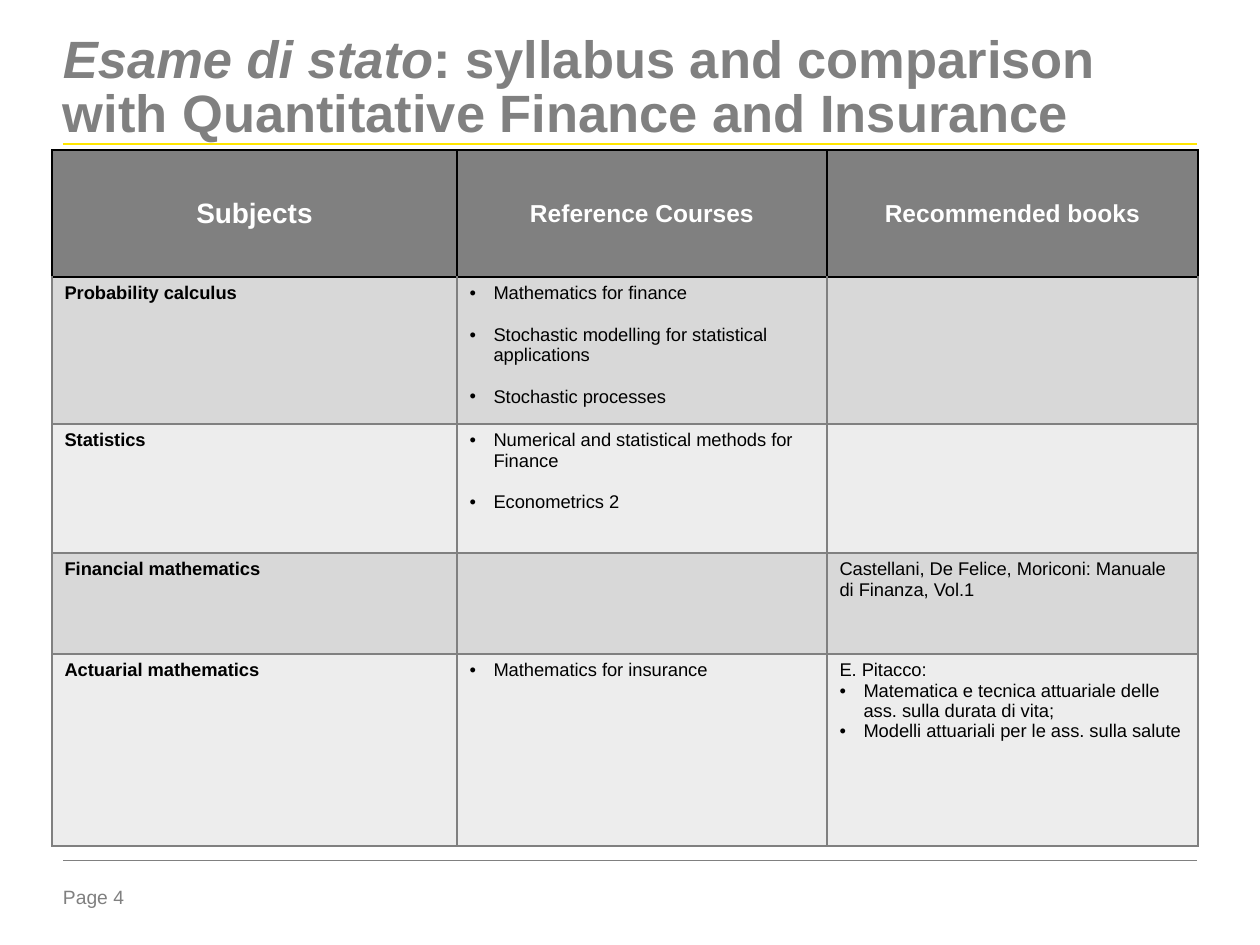
from lxml import etree
from pptx import Presentation
from pptx.dml.color import RGBColor
from pptx.enum.shapes import MSO_CONNECTOR
from pptx.enum.text import MSO_ANCHOR, PP_ALIGN
from pptx.oxml.ns import qn
from pptx.util import Emu, Pt

STRAIGHT = MSO_CONNECTOR.STRAIGHT
TOP, MIDDLE = MSO_ANCHOR.TOP, MSO_ANCHOR.MIDDLE
CENTER, LEFT = PP_ALIGN.CENTER, PP_ALIGN.LEFT

GRAY, BLACK, WHITE, YELLOW = "808080", "000000", "FFFFFF", "FFE600"
BANDS = ("D8D8D8", "EDEDED")
BULLET = "• "

COLUMN_WIDTHS = (405, 370, 371)
ROW_HEIGHTS = (127, 147, 129, 101, 192)
HEADERS = (("Subjects", 16), ("Reference Courses", 14), ("Recommended books", 14))
# Subject, reference courses, recommended books
SYLLABUS = (
    ("Probability calculus",
     ("• Mathematics for finance",
      "• Stochastic modelling for statistical applications",
      "• Stochastic processes"), ()),
    ("Statistics",
     ("• Numerical and statistical methods for Finance", "• Econometrics 2"), ()),
    ("Financial mathematics", (),
     ("Castellani, De Felice, Moriconi: Manuale di Finanza, Vol.1",)),
    ("Actuarial mathematics",
     ("• Mathematics for insurance",),
     ("E. Pitacco:",
      "• Matematica e tecnica attuariale delle ass. sulla durata di vita;",
      "• Modelli attuariali per le ass. sulla salute")),
)


def px(length):
    return Emu(round(length * 914400 / 126))


def color(hex_string):
    return RGBColor.from_string(hex_string)


class SlideBuilder:
    font_name = "Arial"

    def __init__(self, slide):
        self.slide = slide

    def style(self, paragraph, size, hex_color, bold=False):
        font = paragraph.font
        font.name, font.size, font.bold = self.font_name, Pt(size), bold
        font.color.rgb = color(hex_color)

    def text(self, left, top, width, height, runs, size, bold=False,
             inset_top=0, spacing=1.0, anchor=TOP):
        """Add a one-paragraph text box from (text, italic) runs."""
        frame = self.slide.shapes.add_textbox(
            px(left), px(top), px(width), px(height)).text_frame
        frame.word_wrap = True
        frame.vertical_anchor = anchor
        frame.margin_left = frame.margin_right = frame.margin_bottom = 0
        frame.margin_top = px(inset_top)
        paragraph = frame.paragraphs[0]
        paragraph.line_spacing = spacing
        self.style(paragraph, size, GRAY, bold)
        for words, italic in runs:
            run = paragraph.add_run()
            run.text = words
            if italic:
                run.font.italic = True

    def rule(self, left, right, y, hex_color, weight):
        line = self.slide.shapes.add_connector(
            STRAIGHT, px(left), px(y), px(right), px(y))
        line.line.color.rgb = color(hex_color)
        line.line.width = Pt(weight)
        etree.SubElement(line._element.spPr, qn("a:effectLst"))

    def table(self, left, top, widths, heights):
        table = self.slide.shapes.add_table(
            len(heights), len(widths), px(left), px(top),
            px(sum(widths)), px(sum(heights))).table
        table.horz_banding = False
        for column, width in zip(table.columns, widths):
            column.width = px(width)
        for row, height in zip(table.rows, heights):
            row.height = px(height)
        return table

    def borders(self, cell, hex_color, top_color):
        properties = cell._tc.get_or_add_tcPr()
        for side in "LRTB":
            line = etree.SubElement(properties, qn(f"a:ln{side}"), w=str(Pt(1)))
            fill = etree.SubElement(line, qn("a:solidFill"))
            etree.SubElement(fill, qn("a:srgbClr"),
                             val=top_color if side == "T" else hex_color)

    def bullet(self, paragraph):
        properties = paragraph._p.get_or_add_pPr()
        properties.set("marL", str(px(24)))
        properties.set("indent", str(-px(24)))
        etree.SubElement(properties, qn("a:buFont"), typeface=self.font_name)
        etree.SubElement(properties, qn("a:buChar"), char=BULLET.strip())

    def cell(self, cell, lines, size, text_color, fill, border, top_border,
             bold=False, align=LEFT, anchor=TOP, gap=0):
        self.borders(cell, border, top_border)
        cell.fill.solid()
        cell.fill.fore_color.rgb = color(fill)
        cell.vertical_anchor = anchor
        frame = cell.text_frame
        for index, line in enumerate(lines or ("",)):
            paragraph = frame.add_paragraph() if index else frame.paragraphs[0]
            paragraph.alignment = align
            if index and gap:
                paragraph.space_before = Pt(gap)
            if line.startswith(BULLET):
                self.bullet(paragraph)
            self.style(paragraph, size, text_color, bold)
            paragraph.text = line.removeprefix(BULLET)


def main():
    presentation = Presentation()
    presentation.slide_width, presentation.slide_height = px(1260), px(945)
    builder = SlideBuilder(
        presentation.slides.add_slide(presentation.slide_layouts[6]))

    # Footer and rules
    builder.text(63, 885, 100, 28, [("Page 4", False)], 11)
    builder.rule(63, 1197, 144, YELLOW, 1.5)
    builder.rule(63, 1197, 860, GRAY, 0.25)

    # Title
    builder.text(63, 28, 1134, 118,
                 [("Esame di stato", True),
                  (": syllabus and comparison with Quantitative Finance"
                   " and Insurance", False)],
                 30, bold=True, inset_top=5, spacing=0.85, anchor=MIDDLE)

    # Syllabus table: header row, then banded subjects
    table = builder.table(52, 150, COLUMN_WIDTHS, ROW_HEIGHTS)
    for column, (header, size) in enumerate(HEADERS):
        builder.cell(table.cell(0, column), (header,), size, WHITE, GRAY,
                     BLACK, BLACK, bold=True, align=CENTER, anchor=MIDDLE)
    for row, (subject, courses, books) in enumerate(SYLLABUS, start=1):
        band = BANDS[(row - 1) % 2]
        top_border = BLACK if row == 1 else GRAY
        for column, lines in enumerate(((subject,), courses, books)):
            builder.cell(table.cell(row, column), lines, 10.5, BLACK, band,
                         GRAY, top_border, bold=column == 0,
                         gap=12 if column == 1 else 0)

    presentation.save("out.pptx")


if __name__ == "__main__":
    main()
